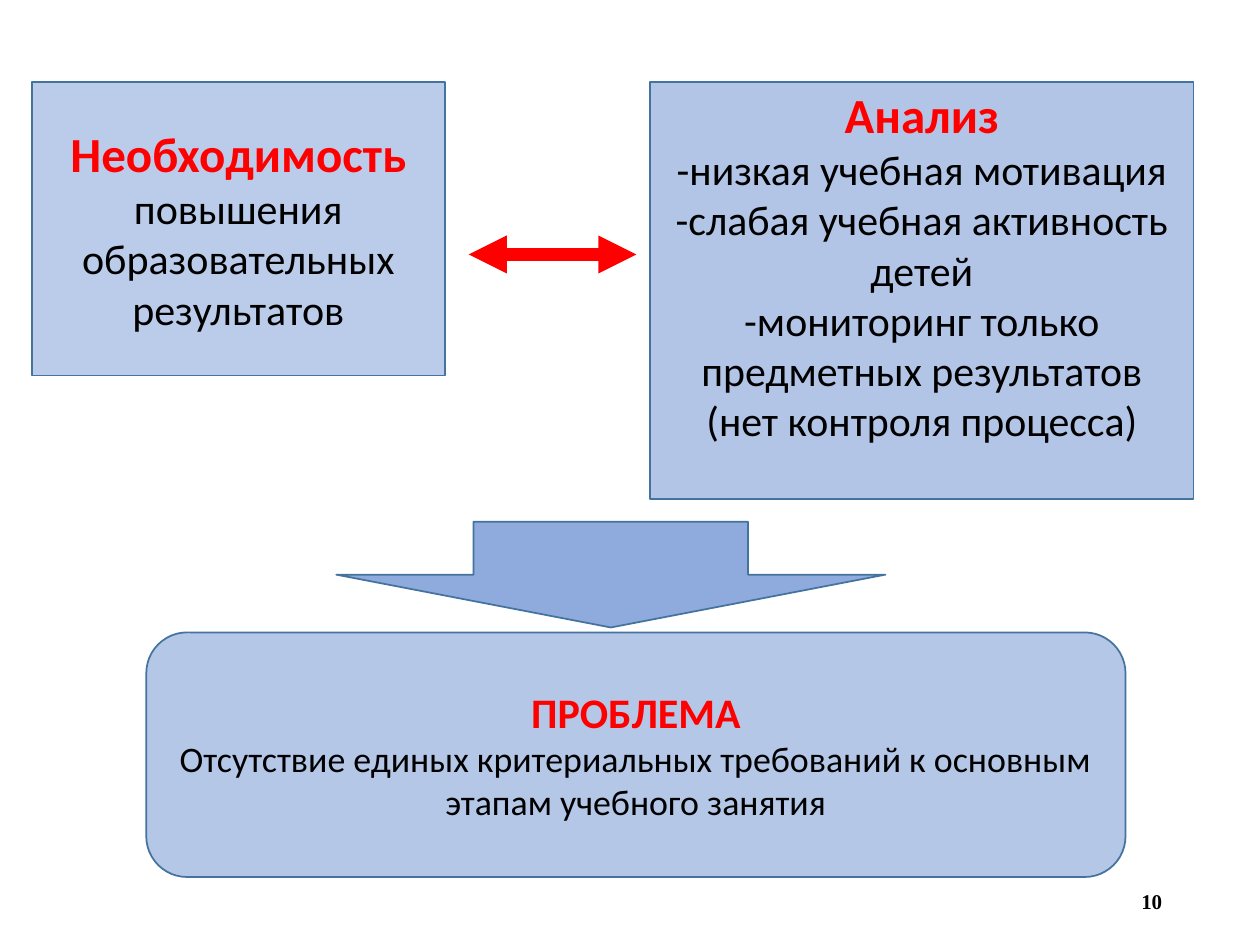
from lxml.etree import SubElement
from pptx import Presentation
from pptx.dml.color import RGBColor
from pptx.enum.shapes import MSO_CONNECTOR, MSO_SHAPE
from pptx.enum.text import MSO_ANCHOR, PP_ALIGN
from pptx.oxml.ns import qn
from pptx.util import Cm, Pt

RED, BLACK = "FF0000", "000000"
BLUE, PALE, EDGE = "8FAADC", "B4C7E7", "43739E"


def paint(color, value):
    color.rgb = RGBColor.from_string(value)


def fade(shape, share):
    """Set the opacity of a solid fill, in percent."""
    tint = shape._element.spPr.find(qn("a:solidFill"))[0]
    SubElement(tint, qn("a:alpha"), val=str(share * 1000))


def add_run(para, text, size, color=BLACK, bold=False, face="Calibri"):
    run = para.add_run()
    run.text = text
    run.font.name, run.font.size, run.font.bold = face, Pt(size), bold
    paint(run.font.color, color)


def add_block(slide, kind, place, fill, share=100):
    block = slide.shapes.add_shape(kind, *map(Cm, place))
    block.shadow.inherit = False
    block.fill.solid()
    paint(block.fill.fore_color, fill)
    if share < 100:
        fade(block, share)
    paint(block.line.color, EDGE)
    block.line.width = Pt(1)
    return block


def write(block, paras):
    """Fill a block with centred paragraphs, each a list of runs."""
    frame = block.text_frame
    frame.word_wrap = True
    frame.vertical_anchor = MSO_ANCHOR.MIDDLE
    for i, runs in enumerate(paras):
        para = frame.add_paragraph() if i else frame.paragraphs[0]
        para.alignment = PP_ALIGN.CENTER
        for run in runs:
            add_run(para, *run)


def add_arrow(slide, left, right, y):
    """Draw a red line with a head at both ends."""
    arrow = slide.shapes.add_connector(
        MSO_CONNECTOR.STRAIGHT, Cm(left), Cm(y), Cm(right), Cm(y))
    paint(arrow.line.color, RED)
    arrow.line.width = Pt(7.25)
    line = arrow.line._get_or_add_ln()
    for end in ("a:headEnd", "a:tailEnd"):
        SubElement(line, qn(end), type="triangle")
    SubElement(arrow._element.spPr, qn("a:effectLst"))


def add_number(slide, text):
    box = slide.shapes.add_textbox(Cm(17.96), Cm(17.65), Cm(5.72), Cm(1.02))
    frame = box.text_frame
    frame.word_wrap = True
    frame.vertical_anchor = MSO_ANCHOR.MIDDLE
    para = frame.paragraphs[0]
    para.alignment = PP_ALIGN.RIGHT
    add_run(para, text, 12, bold=True, face="Times New Roman")


def main():
    deck = Presentation()
    deck.slide_width, deck.slide_height = Cm(25.4), Cm(19.05)
    slide = deck.slides.add_slide(deck.slide_layouts[6])
    add_number(slide, "10")

    need = add_block(slide, MSO_SHAPE.RECTANGLE,
                     (0.64, 1.65, 8.33, 5.92), BLUE, 60)
    write(need, [[("Необходимость", 28, RED, True),
                  (" повышения образовательных результатов", 24)]])

    study = add_block(slide, MSO_SHAPE.RECTANGLE,
                      (13.11, 1.65, 10.95, 8.41), BLUE, 68)
    points = ("-низкая учебная мотивация",
              "-слабая учебная активность детей",
              "-мониторинг только предметных результатов (нет контроля процесса)")
    write(study, [[("Анализ", 28, RED, True)]]
          + [[(point, 23.9)] for point in points])
    study.text_frame.margin_bottom = Cm(1.15)

    add_arrow(slide, 9.45, 12.83, 5.13)

    issue = add_block(slide, MSO_SHAPE.ROUNDED_RECTANGLE,
                      (2.95, 12.75, 19.74, 4.93), PALE)
    write(issue, [[("ПРОБЛЕМА", 24, RED, True)],
                  [("Отсутствие единых критериальных требований к основным "
                    "этапам учебного занятия", 20.5)]])

    add_block(slide, MSO_SHAPE.DOWN_ARROW, (6.78, 10.52, 11.07, 2.13), BLUE)
    deck.save("out.pptx")


if __name__ == "__main__":
    main()
